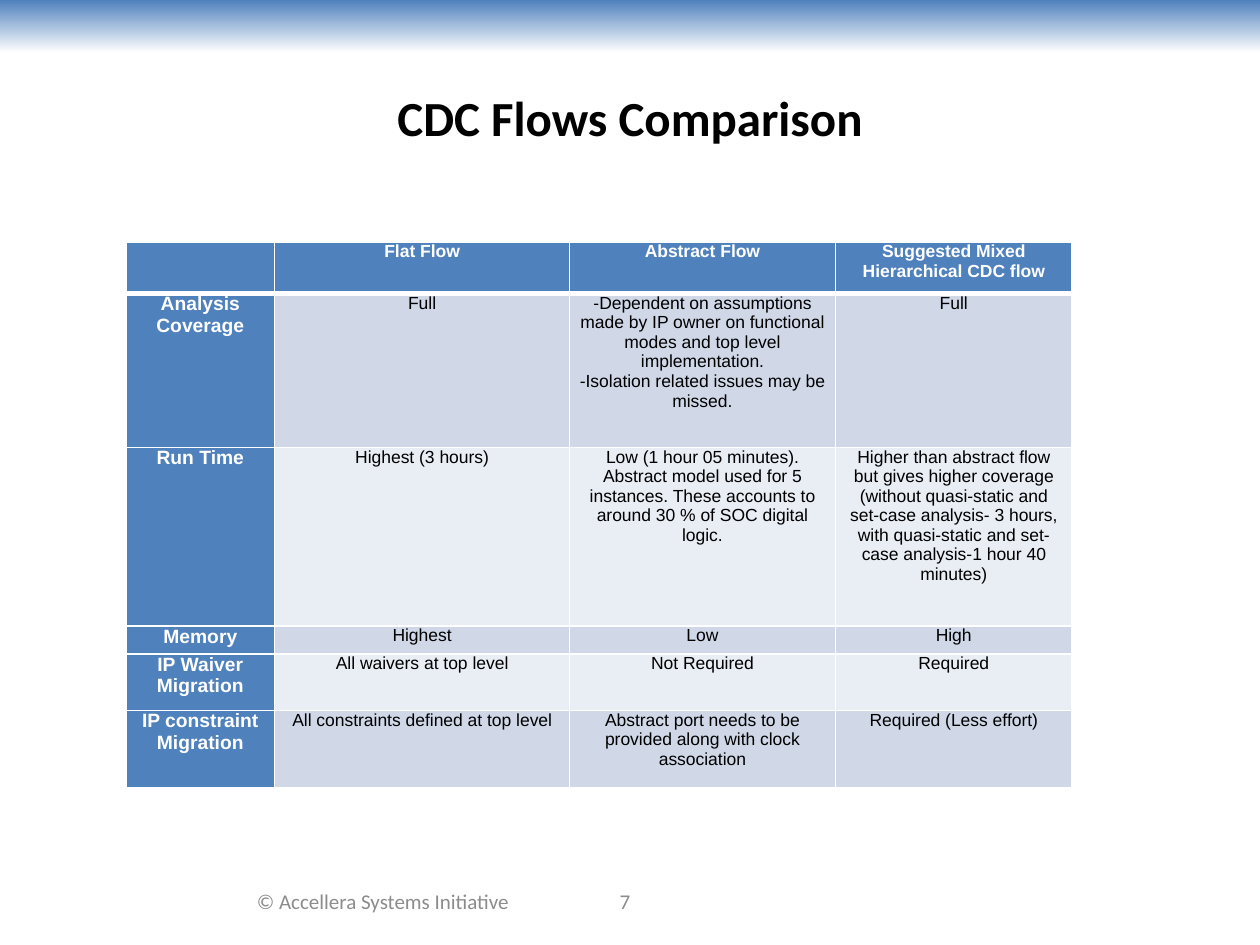
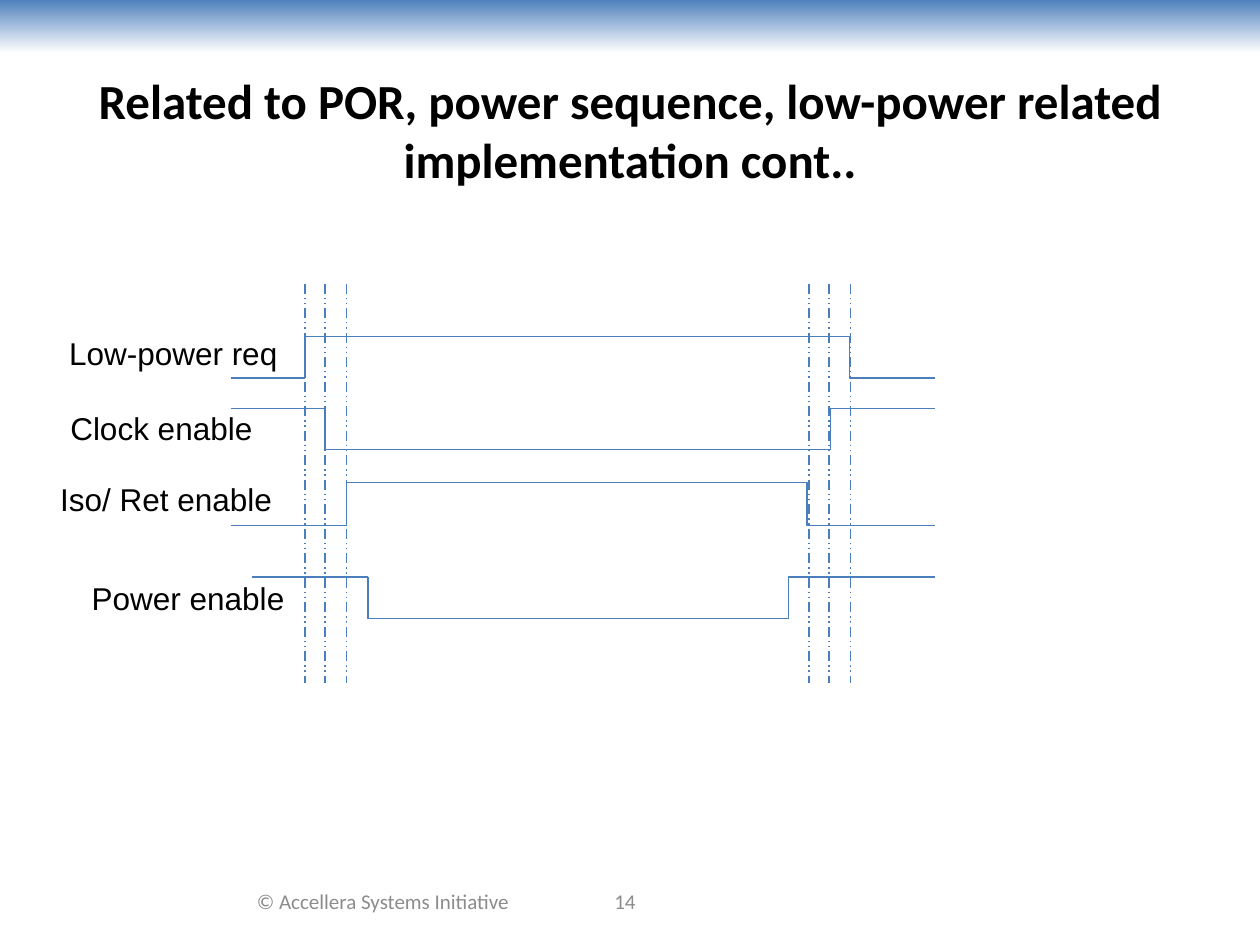
"""Build two slides on clock domain crossing: a flow comparison table and a power sequence diagram."""
from lxml import etree
from pptx import Presentation
from pptx.dml.color import RGBColor
from pptx.enum.dml import MSO_LINE
from pptx.enum.shapes import MSO_CONNECTOR as CONN, MSO_SHAPE
from pptx.enum.text import MSO_ANCHOR, MSO_AUTO_SIZE, PP_ALIGN
from pptx.oxml import parse_xml
from pptx.oxml.ns import nsdecls, qn
from pptx.util import Inches, Pt

BLUE, WHITE, BLACK, GREY, LINE = "4F81BD", "FFFFFF", "000000", "8C8C8C", "4B7EBC"
BANDS = ["D0D8E8", "E9EDF4"]
rgb = RGBColor.from_string


def write(tf, text, size, font, color, bold=False, align=PP_ALIGN.CENTER):
    tf.text = text
    for p in tf.paragraphs:
        p.alignment = align
        for r in p.runs:
            r.font.size, r.font.name, r.font.bold = Pt(size), font, bold
            r.font.color.rgb = rgb(color)


def add_line(s, x1, y1, x2, y2, kind=CONN.STRAIGHT):
    c = s.shapes.add_connector(kind, Inches(x1), Inches(y1), Inches(x2), Inches(y2))
    c.line.color.rgb = rgb(LINE)
    c.line.width = Pt(0.75)
    etree.SubElement(c.element.spPr, qn("a:effectLst"))
    return c


prs = Presentation()
prs.slide_width, prs.slide_height = Inches(10), Inches(7.5)

slides = []
for title, number, height in [
    ("CDC Flows Comparison", "7", 1.25),
    ("Related to POR, power sequence, low-power related implementation cont..", "14", 1.45),
]:
    s = prs.slides.add_slide(prs.slide_layouts[5])
    slides.append(s)
    sp = s.shapes.title
    sp.left, sp.top, sp.width, sp.height = Inches(0.5), Inches(0.3), Inches(9), Inches(height)
    tf = sp.text_frame
    tf.auto_size, tf.vertical_anchor = MSO_AUTO_SIZE.NONE, MSO_ANCHOR.MIDDLE
    write(tf, title, 28, "Calibri", BLACK, bold=True)
    for text, left, width in [("© Accellera Systems Initiative", 1.83, 2.42), (number, 4, 1.92)]:
        tf = s.shapes.add_textbox(Inches(left), Inches(6.95), Inches(width), Inches(0.4)).text_frame
        tf.word_wrap, tf.vertical_anchor = True, MSO_ANCHOR.MIDDLE
        write(tf, text, 12, "Calibri", GREY)

band = slides[0].shapes.add_shape(MSO_SHAPE.RECTANGLE, 0, 0, prs.slide_width, Inches(0.42))
band.shadow.inherit = False
band.line.fill.background()
band.fill.gradient()
band.fill.gradient_angle = 270
for stop, position, color in zip(band.fill.gradient_stops, (0, 1), (BLUE, WHITE)):
    stop.position = position
    stop.color.rgb = rgb(color)
prs.slide_master.shapes.element.insert(2, band.element)

rows = [
    ["", "Flat Flow", "Abstract Flow", "Suggested Mixed Hierarchical CDC flow"],
    ["Analysis Coverage", "Full",
     "-Dependent on assumptions made by IP owner on functional modes and top level implementation.\n"
     "-Isolation related issues may be missed.", "Full"],
    ["Run Time", "Highest (3 hours)",
     "Low (1 hour 05 minutes). Abstract model used for 5 instances. "
     "These accounts to around 30 % of SOC digital logic.",
     "Higher than abstract flow but gives higher coverage (without quasi-static and set-case "
     "analysis- 3 hours, with quasi-static and set-case analysis-1 hour 40 minutes)"],
    ["Memory", "Highest", "Low", "High"],
    ["IP Waiver Migration", "All waivers at top level", "Not Required", "Required"],
    ["IP constraint Migration", "All constraints defined at top level",
     "Abstract port needs to be provided along with clock association", "Required (Less effort)"],
]
table = slides[0].shapes.add_table(6, 4, Inches(1), Inches(1.92), Inches(7.5), Inches(4.33)).table
for column, width in zip(table.columns, [1.18, 2.34, 2.11, 1.88]):
    column.width = Inches(width)
for row, height in zip(table.rows, [0.41, 1.22, 1.42, 0.22, 0.45, 0.61]):
    row.height = Inches(height)
for i, texts in enumerate(rows):
    for j, text in enumerate(texts):
        cell = table.cell(i, j)
        cell.margin_left = cell.margin_right = Inches(0.07)
        cell.margin_top = cell.margin_bottom = 0
        heading = i == 0 or j == 0
        write(cell.text_frame, text, 11 if i and j == 0 else 10, "Arial",
              WHITE if heading else BLACK, bold=heading)
        for side in "LRTB":
            thick = (i, side) in [(0, "B"), (1, "T")]
            cell._tc.get_or_add_tcPr().append(parse_xml(
                f'<a:ln{side} {nsdecls("a")} w="{Pt(3 if thick else 1)}"><a:solidFill>'
                f'<a:srgbClr val="{WHITE}"/></a:solidFill></a:ln{side}>'))
        cell.fill.solid()
        cell.fill.fore_color.rgb = rgb(BLUE if heading else BANDS[(i - 1) % 2])

s = slides[1]
for x in [2.42, 2.58, 2.75, 6.42, 6.58, 6.75]:
    add_line(s, x, 2.25, x, 5.42).line.dash_style = MSO_LINE.DASH_DOT_DOT

end = 7.42
for name, left, top, width, start, edge, idle, active, bend in [
    ("Low-power req", 0.45, 2.6, 1.87, 1.83, 2.42, 3, 2.67, 0.865),
    ("Clock enable", 0.46, 3.2, 1.66, 1.83, 2.58, 3.24, 3.57, 0.829),
    ("Iso/ Ret enable", 0.38, 3.76, 2, 1.83, 2.75, 4.17, 3.83, 0.783),
    ("Power enable", 0.63, 4.55, 1.74, 2, 2.92, 4.58, 4.91, 0.742),
]:
    add_line(s, start, idle, edge, idle)
    add_line(s, edge, idle, edge, active)
    pulse = add_line(s, edge, active, end, idle, CONN.ELBOW)
    guides = pulse.element.spPr.find(qn("a:prstGeom")).get_or_add_avLst()
    etree.SubElement(guides, qn("a:gd"), name="adj1", fmla=f"val {round(bend * 100000)}")
    tf = s.shapes.add_textbox(Inches(left), Inches(top), Inches(width), Inches(0.4)).text_frame
    tf.word_wrap = False
    write(tf, name, 18, "Arial", BLACK, align=PP_ALIGN.LEFT)

prs.save("out.pptx")
